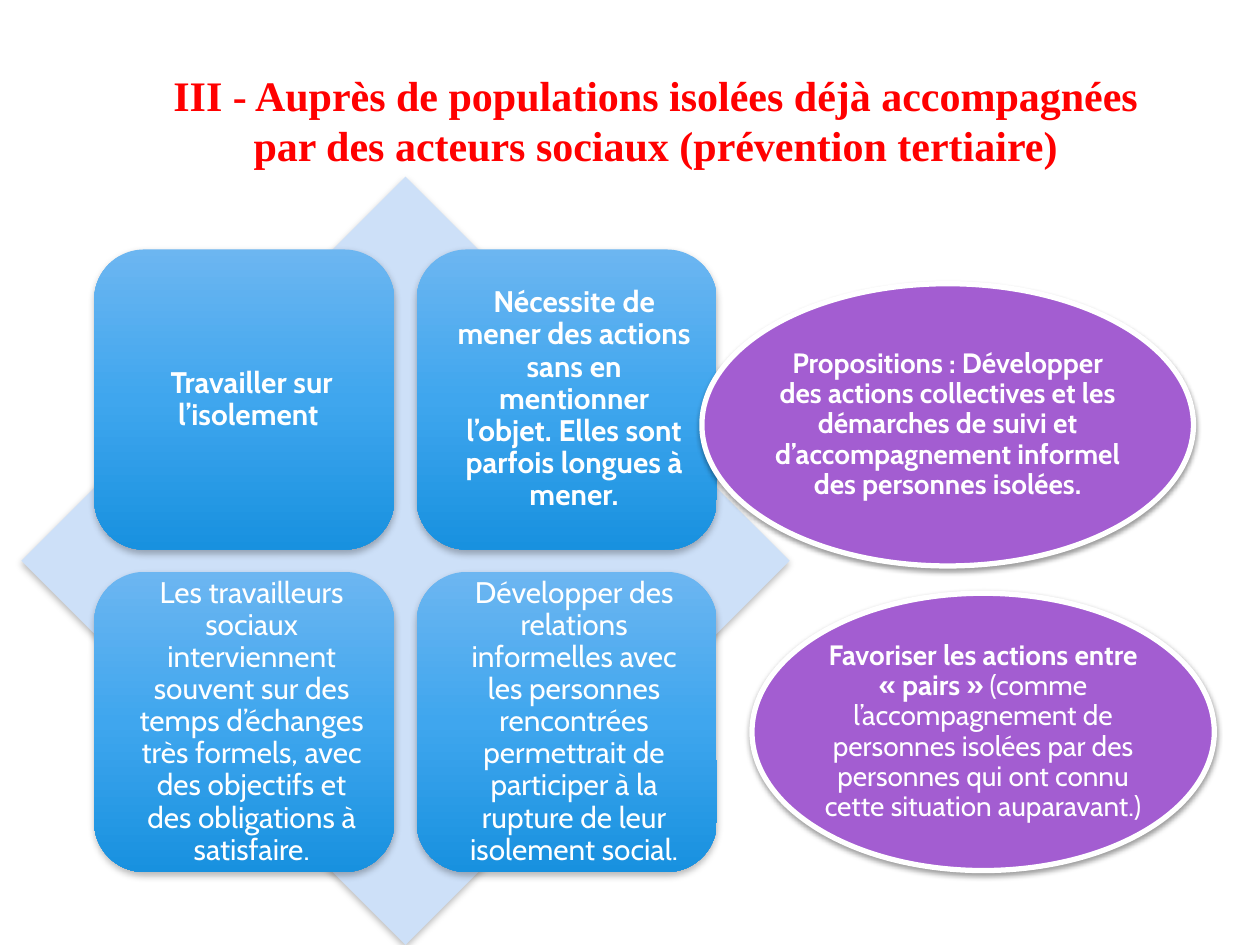
import copy
from dataclasses import dataclass

import lxml.etree
import pptx
import pptx.dml.color
import pptx.enum.shapes
import pptx.enum.text
import pptx.oxml.ns
import pptx.util
from pptx.util import Cm

COLOURS = {
    "title": "FF0000",
    "diamond": "CDE0F8",
    "tile_top": "6CB6F1",
    "tile_middle": "3FA6EE",
    "tile_bottom": "1891DF",
    "ellipse": "A35DD1",
    "white": "FFFFFF",
    "shadow": "000000",
}
SHAPES = pptx.enum.shapes.MSO_SHAPE
ANCHORS = pptx.enum.text.MSO_ANCHOR
CENTRE = pptx.enum.text.PP_ALIGN.CENTER
qn = pptx.oxml.ns.qn


@dataclass
class Run:
    text: str
    bold: bool = False


@dataclass
class Shadow:
    opacity: int  # percent
    blur: float  # points
    distance: float  # points


@dataclass
class Box:
    left: float  # all in centimetres
    top: float
    width: float
    height: float

    def lengths(self) -> tuple:
        return Cm(self.left), Cm(self.top), Cm(self.width), Cm(self.height)


@dataclass
class Proposal:
    box: Box
    runs: list[Run]


TILE_SIZE, TILE_PITCH = 6.05, 6.5
TILE_LEFT, TILE_TOP = 1.9, 5.03
TILE_SHADOW = Shadow(28, 4, 2)
PROPOSAL_SHADOW = Shadow(38, 3.1, 1.6)

TILES = [
    Run("Travailler sur l’isolement ", True),
    Run("Nécessite de mener des actions sans en mentionner l’objet. "
        "Elles sont parfois longues à mener.", True),
    Run("Les travailleurs sociaux interviennent souvent sur des temps d’échanges "
        "très formels, avec des objectifs et des obligations à satisfaire."),
    Run("Développer des relations informelles avec les personnes rencontrées "
        "permettrait de participer à la rupture de leur isolement social."),
]
PROPOSALS = [
    Proposal(Box(14.15, 5.72, 9.91, 5.69), [
        Run("Propositions : Développer des actions collectives et les démarches de "
            "suivi et d’accompagnement informel des personnes isolées.", True),
    ]),
    Proposal(Box(15.16, 11.96, 9.32, 5.59), [
        Run("Favoriser les actions entre « pairs » ", True),
        Run("(comme l’accompagnement de personnes isolées par des personnes "
            "qui ont connu cette situation auparavant.)"),
    ]),
]


def colour(name: str) -> pptx.dml.color.RGBColor:
    return pptx.dml.color.RGBColor.from_string(COLOURS[name])


def add_shape(slide, kind, box: Box, shadow: Shadow):
    """Add a shape without outline that casts a shadow downwards."""
    shape = slide.shapes.add_shape(kind, *box.lengths())
    shape.line.fill.background()
    shape.shadow.inherit = False
    effects = shape._element.spPr.find(qn("a:effectLst"))
    outer = lxml.etree.SubElement(
        effects, qn("a:outerShdw"), blurRad=str(pptx.util.Pt(shadow.blur)),
        dist=str(pptx.util.Pt(shadow.distance)), dir="5400000", rotWithShape="0")
    tint = lxml.etree.SubElement(outer, qn("a:srgbClr"), val=COLOURS["shadow"])
    lxml.etree.SubElement(tint, qn("a:alpha"), val=str(shadow.opacity * 1000))
    return shape


def fill_solid(shape, name: str) -> None:
    shape.fill.solid()
    shape.fill.fore_color.rgb = colour(name)


def fill_tile(shape) -> None:
    """Fill with a three-stop gradient running from top to bottom."""
    shape.fill.gradient()
    shape.fill.gradient_angle = 270
    first = shape._element.spPr.find(".//" + qn("a:gs"))
    first.addnext(copy.deepcopy(first))
    names = ("tile_top", "tile_middle", "tile_bottom")
    for index, (stop, name) in enumerate(zip(shape.fill.gradient_stops, names)):
        stop.position = index / 2
        stop.color.rgb = colour(name)


def write_text(shape, runs: list[Run], size: float, space_after: float,
               insets: tuple[float, float, float, float]) -> None:
    frame = shape.text_frame
    frame.word_wrap = True
    frame.vertical_anchor = ANCHORS.MIDDLE
    (frame.margin_left, frame.margin_top,
     frame.margin_right, frame.margin_bottom) = map(Cm, insets)
    paragraph = frame.paragraphs[0]
    paragraph.alignment = CENTRE
    paragraph.line_spacing = 0.9
    paragraph.space_after = pptx.util.Pt(space_after)
    paragraph.font.name = "Cabin"
    paragraph.font.size = pptx.util.Pt(size)
    paragraph.font.color.rgb = colour("white")
    for item in runs:
        run = paragraph.add_run()
        run.text = item.text
        run.font.bold = item.bold


def add_title(slide) -> None:
    frame = slide.shapes.add_textbox(*Box(2.74, 1.27, 20.96, 2.29).lengths()).text_frame
    frame.word_wrap = True
    paragraph = frame.paragraphs[0]
    paragraph.text = ("III - Auprès de populations isolées déjà accompagnées "
                      "par des acteurs sociaux (prévention tertiaire)")
    paragraph.alignment = CENTRE
    paragraph.font.name = "Times New Roman"
    paragraph.font.size = pptx.util.Pt(24)
    paragraph.font.bold = True
    paragraph.font.color.rgb = colour("title")


def add_tile(slide, index: int, run: Run) -> None:
    row, column = divmod(index, 2)
    box = Box(TILE_LEFT + column * TILE_PITCH, TILE_TOP + row * TILE_PITCH,
              TILE_SIZE, TILE_SIZE)
    shape = add_shape(slide, SHAPES.ROUNDED_RECTANGLE, box, TILE_SHADOW)
    fill_tile(shape)
    write_text(shape, [run], 17, 6, (0.48, 0.48, 0.18, 0.48))


def add_proposal(slide, proposal: Proposal) -> None:
    shape = add_shape(slide, SHAPES.OVAL, proposal.box, PROPOSAL_SHADOW)
    fill_solid(shape, "ellipse")
    shape.line.color.rgb = colour("white")
    shape.line.width = pptx.util.Pt(3)
    write_text(shape, proposal.runs, 16, 5.6, (0, 0, 0, 0))


def main() -> None:
    presentation = pptx.Presentation()
    presentation.slide_width, presentation.slide_height = Cm(25.4), Cm(19.05)
    slide = presentation.slides.add_slide(presentation.slide_layouts[6])

    add_title(slide)

    # Matrix of four tiles on a diamond
    diamond = add_shape(slide, SHAPES.DIAMOND, Box(0.43, 3.56, 15.49, 15.49), TILE_SHADOW)
    fill_solid(diamond, "diamond")
    for index, run in enumerate(TILES):
        add_tile(slide, index, run)

    # Proposals on the right
    for proposal in PROPOSALS:
        add_proposal(slide, proposal)

    presentation.save("out.pptx")


if __name__ == "__main__":
    main()
